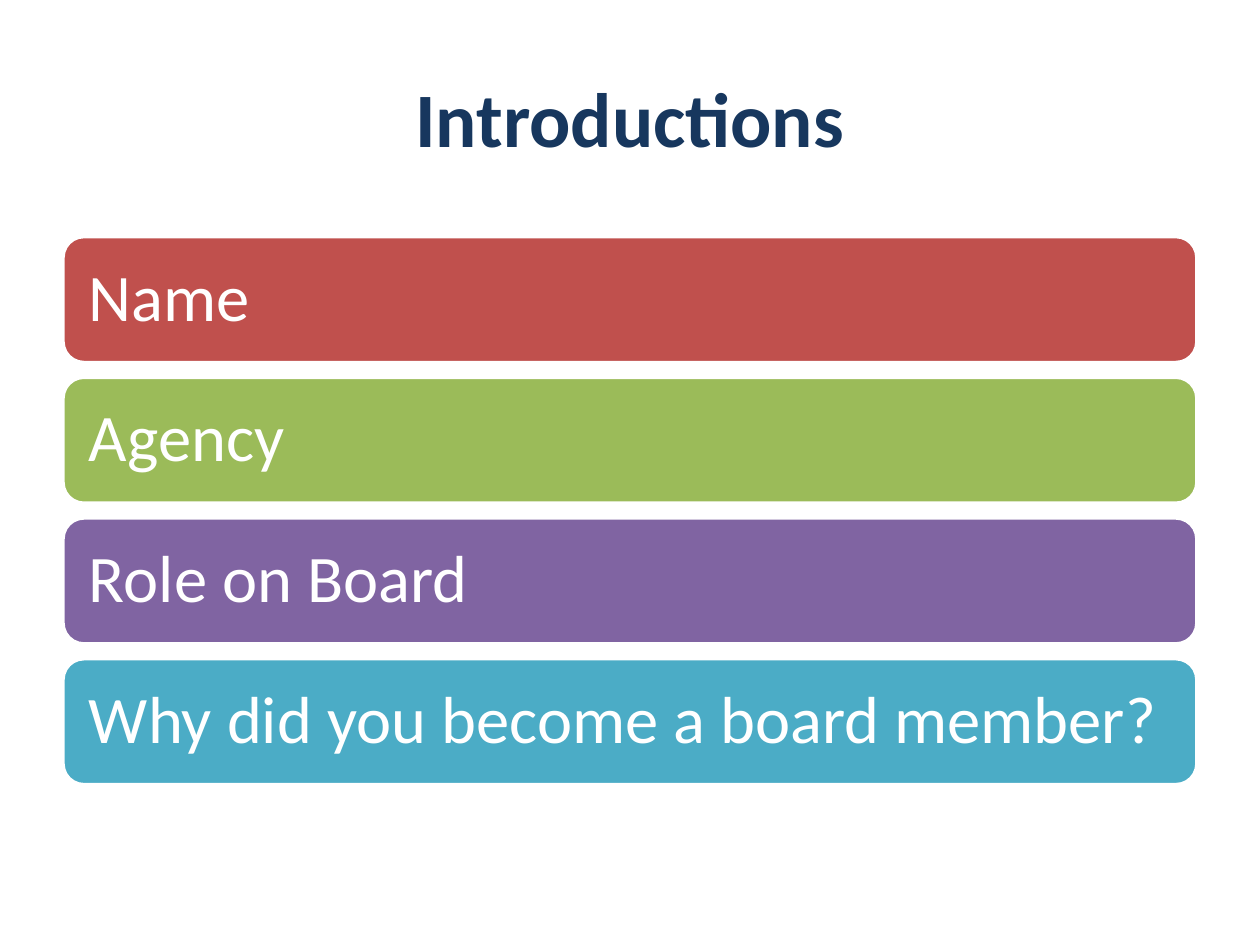
from dataclasses import dataclass

from pptx import Presentation
from pptx.dml.color import RGBColor
from pptx.enum.shapes import MSO_SHAPE
from pptx.enum.text import MSO_ANCHOR, PP_ALIGN
from pptx.slide import Slide
from pptx.text.text import TextFrame
from pptx.util import Pt

ROUND = MSO_SHAPE.ROUNDED_RECTANGLE
MIDDLE = MSO_ANCHOR.MIDDLE
LEFT, CENTER = PP_ALIGN.LEFT, PP_ALIGN.CENTER

FONT = "Calibri"
COLORS = {
    "navy": "17375E",
    "white": "FFFFFF",
    "red": "C0504D",
    "green": "9BBB59",
    "purple": "8064A2",
    "teal": "4BACC6",
}

# Layout in points
EDGE, WIDTH = 36, 648
BAR_TOP, BAR_HIGH, BAR_STEP = 135.2, 72, 80.4
INSET = 11.4


@dataclass
class Bar:
    text: str
    color: str


BARS = [
    Bar("Name", "red"),
    Bar("Agency", "green"),
    Bar("Role on Board", "purple"),
    Bar("Why did you become a board member?", "teal"),
]


def rgb(name: str) -> RGBColor:
    return RGBColor.from_string(COLORS[name])


def set_text(frame: TextFrame, text: str, size: float, color: str,
             align: PP_ALIGN, bold: bool = False) -> None:
    frame.text = text
    frame.word_wrap = True
    frame.vertical_anchor = MIDDLE
    para = frame.paragraphs[0]
    para.alignment = align
    font = para.runs[0].font
    font.name, font.size, font.bold = FONT, Pt(size), bold
    font.color.rgb = rgb(color)


def add_title(slide: Slide, text: str) -> None:
    box = slide.shapes.add_textbox(Pt(EDGE), Pt(21.6), Pt(WIDTH), Pt(90))
    set_text(box.text_frame, text, 44, "navy", CENTER, bold=True)


def add_bar(slide: Slide, bar: Bar, top: float) -> None:
    shape = slide.shapes.add_shape(
        ROUND, Pt(EDGE), Pt(top), Pt(WIDTH), Pt(BAR_HIGH))
    shape.shadow.inherit = False
    shape.fill.solid()
    shape.fill.fore_color.rgb = rgb(bar.color)
    shape.line.color.rgb = rgb("white")
    shape.line.width = Pt(2)
    frame = shape.text_frame
    set_text(frame, bar.text, 38, "white", LEFT)
    frame.margin_left = frame.margin_right = Pt(INSET)
    frame.margin_top = frame.margin_bottom = Pt(INSET)
    frame.paragraphs[0].line_spacing = 0.9


def main() -> None:
    deck = Presentation()
    deck.slide_width, deck.slide_height = Pt(720), Pt(540)
    slide = deck.slides.add_slide(deck.slide_layouts[6])

    # Heading
    add_title(slide, "Introductions")

    # Stack of topic bars
    for row, bar in enumerate(BARS):
        add_bar(slide, bar, BAR_TOP + row * BAR_STEP)

    deck.save("out.pptx")


if __name__ == "__main__":
    main()
